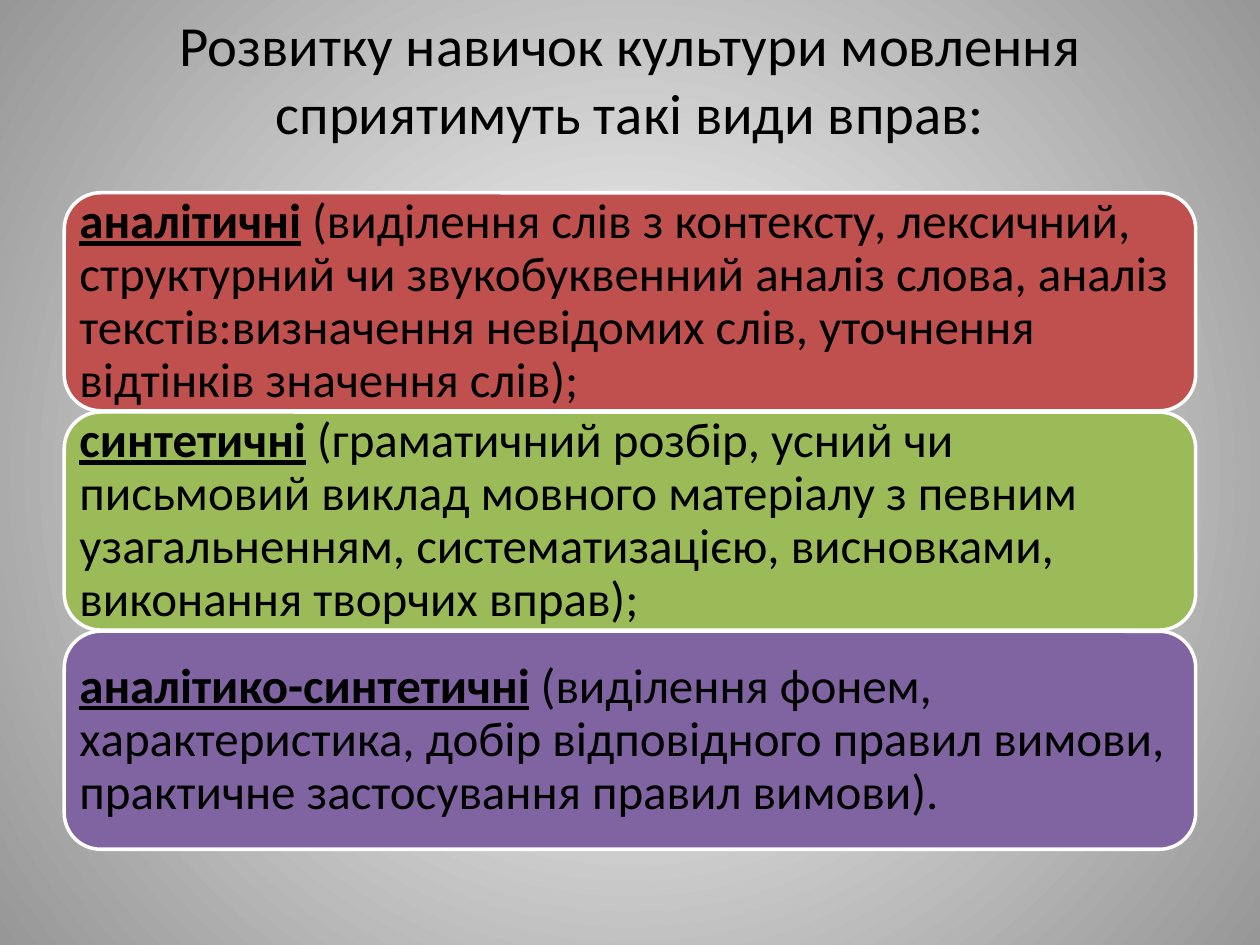
from dataclasses import dataclass

from lxml import etree
from pptx import Presentation
from pptx.dml.color import RGBColor
from pptx.enum import shapes, text
from pptx.oxml import ns
from pptx.util import Pt


@dataclass(frozen=True)
class Theme:
    """Colours, font and type sizes of the slide."""
    font: str = "Calibri"
    ink: str = "000000"
    outline: str = "FFFFFF"
    centre: str = "FFFFFF"
    edge: str = "979797"
    cards: tuple = ("C0504D", "9BBB59", "8064A2")
    title_size: float = 32.4
    body_size: float = 28


THEME = Theme()
TITLE = "Розвитку навичок культури мовлення сприятимуть такі види вправ:"
EXERCISES = (
    ("аналітичні", " (виділення слів з контексту, лексичний, структурний чи "
     "звукобуквенний аналіз слова, аналіз текстів:визначення невідомих слів, "
     "уточнення відтінків значення слів);"),
    ("синтетичні", " (граматичний розбір, усний чи письмовий виклад мовного "
     "матеріалу з певним узагальненням, систематизацією, висновками, "
     "виконання творчих вправ);"),
    ("аналітико-синтетичні", " (виділення фонем, характеристика, добір "
     "відповідного правил вимови, практичне застосування правил вимови)."),
)


def add_text(paragraph, content, size, bold=False, underline=False):
    """Append a formatted run to a paragraph."""
    run = paragraph.add_run()
    run.text = content
    font = run.font
    font.name, font.size = THEME.font, Pt(size)
    font.bold, font.underline = bold, underline
    font.color.rgb = RGBColor.from_string(THEME.ink)


def paint_background(slide):
    """Fill the background with a radial gradient from the centre."""
    fill = slide.background.fill
    fill.gradient()
    for stop, colour in zip(fill.gradient_stops, (THEME.centre, THEME.edge)):
        stop.color.rgb = RGBColor.from_string(colour)
    gradient = slide.element.find(".//" + ns.qn("a:gradFill"))
    gradient.remove(gradient.find(ns.qn("a:lin")))
    radial = etree.SubElement(gradient, ns.qn("a:path"), path="circle")
    etree.SubElement(radial, ns.qn("a:fillToRect"),
                     dict.fromkeys("ltrb", "50000"))


def place_title(slide, left, top, width, height):
    """Place the title, raised by one line within its box."""
    title = slide.shapes.title
    title.left, title.top = Pt(left), Pt(top)
    title.width, title.height = Pt(width), Pt(height)
    frame = title.text_frame
    frame.auto_size = text.MSO_AUTO_SIZE.NONE
    frame.vertical_anchor = text.MSO_ANCHOR.MIDDLE
    frame.margin_bottom = Pt(42.5)
    frame.paragraphs[0].alignment = text.PP_ALIGN.CENTER
    add_text(frame.paragraphs[0], TITLE, THEME.title_size)


def add_card(slide, left, top, width, height, colour, term, details):
    """Add a rounded card with an emphasised term and its details."""
    card = slide.shapes.add_shape(
        shapes.MSO_SHAPE.ROUNDED_RECTANGLE,
        Pt(left), Pt(top), Pt(width), Pt(height))
    card.shadow.inherit = False
    card.fill.solid()
    card.fill.fore_color.rgb = RGBColor.from_string(colour)
    card.line.color.rgb = RGBColor.from_string(THEME.outline)
    card.line.width = Pt(2)
    frame = card.text_frame
    frame.word_wrap = True
    frame.vertical_anchor = text.MSO_ANCHOR.MIDDLE
    frame.margin_left = frame.margin_right = Pt(2.6)
    frame.margin_top = frame.margin_bottom = Pt(2.6)
    paragraph = frame.paragraphs[0]
    paragraph.alignment = text.PP_ALIGN.LEFT
    paragraph.line_spacing = 0.9
    add_text(paragraph, term, THEME.body_size, bold=True, underline=True)
    add_text(paragraph, details, THEME.body_size)


def place_cards(slide, left, top, width, height, gap=0.7):
    """Stack equal exercise cards down the given box."""
    count = len(EXERCISES)
    card_height = (height - gap * (count - 1)) / count
    for index, (colour, exercise) in enumerate(zip(THEME.cards, EXERCISES)):
        card_top = top + index * (card_height + gap)
        add_card(slide, left, card_top, width, card_height, colour, *exercise)


def main():
    """Build and save the presentation."""
    presentation = Presentation()
    presentation.slide_width, presentation.slide_height = Pt(720), Pt(540)
    slide = presentation.slides.add_slide(presentation.slide_layouts[5])
    paint_background(slide)
    place_title(slide, 36, 21.6, 648, 84.24)
    place_cards(slide, 36.72, 110.16, 646.56, 375.12)
    presentation.save("out.pptx")


if __name__ == "__main__":
    main()
